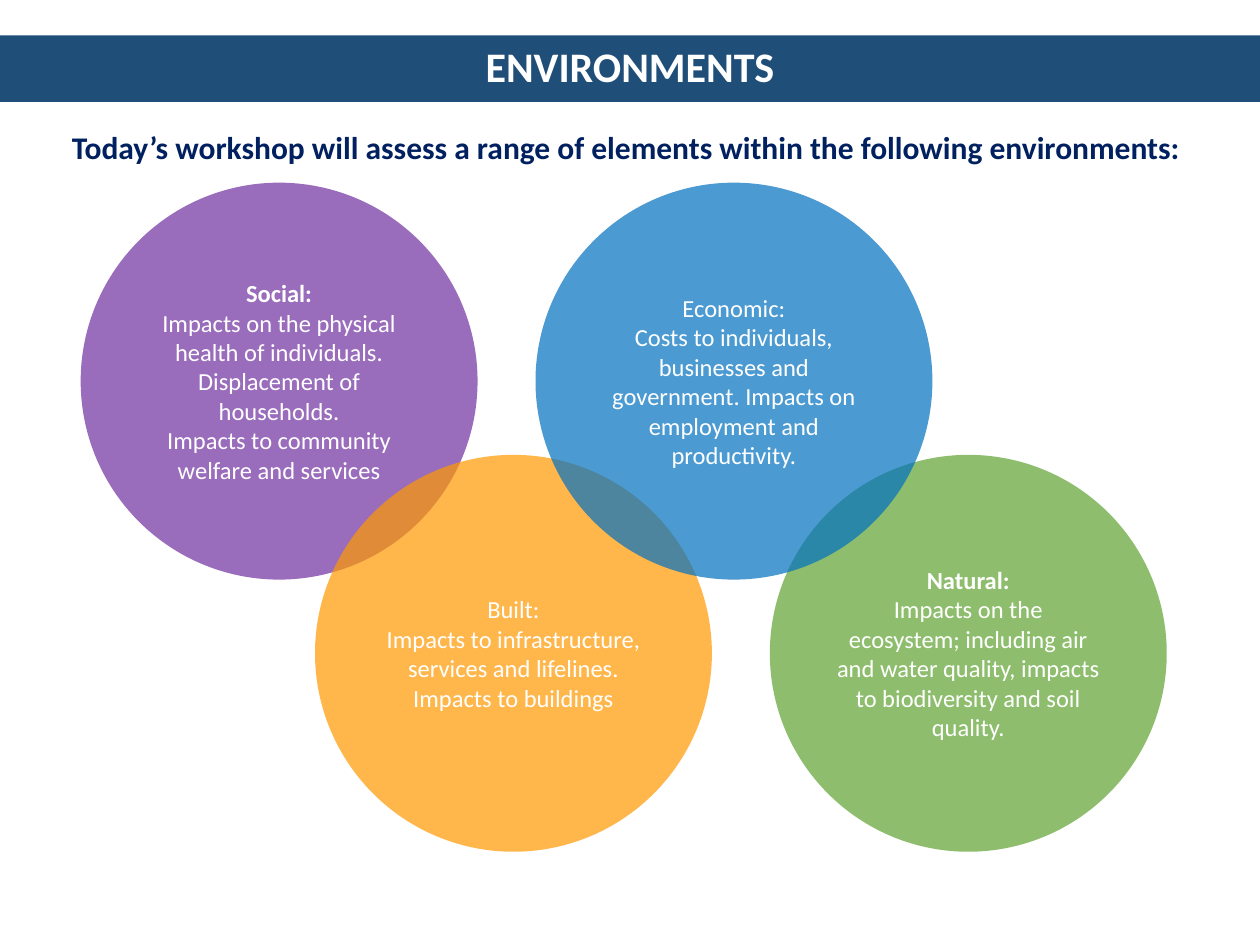
from lxml.etree import SubElement
from pptx import Presentation
from pptx.dml.color import RGBColor
from pptx.enum.shapes import MSO_SHAPE as Shape
from pptx.enum.text import MSO_ANCHOR as Anchor, MSO_AUTO_SIZE as AutoSize, PP_ALIGN as Align
from pptx.oxml.ns import qn
from pptx.util import Inches, Pt

WHITE = RGBColor(0xFF, 0xFF, 0xFF)
NAVY = RGBColor(0x00, 0x20, 0x60)
BAR_BLUE = RGBColor(0x1F, 0x4E, 0x79)
PURPLE = RGBColor(0x70, 0x30, 0xA0)
GREEN = RGBColor(0x70, 0xAD, 0x47)
ORANGE = RGBColor(0xFF, 0x99, 0x00)
BLUE = RGBColor(0x00, 0x70, 0xC0)

DIAMETER = 3.15
UPPER_ROW, LOWER_ROW = 1.45, 3.61

# Left, top, colour, opacity in percent, bold heading, paragraphs
CIRCLES = [
    (0.64, UPPER_ROW, PURPLE, 70, True,
     ["Social:",
      "Impacts on the physical health of individuals. Displacement of households.",
      "Impacts to community welfare and services"]),
    (6.11, LOWER_ROW, GREEN, 79, True,
     ["Natural:",
      "Impacts on the ecosystem; including air and water quality, "
      "impacts to biodiversity and soil quality."]),
    (2.5, LOWER_ROW, ORANGE, 70, False,
     ["Built:",
      "Impacts to infrastructure, services and lifelines.",
      "Impacts to buildings"]),
    (4.25, UPPER_ROW, BLUE, 70, False,
     ["Economic:",
      "Costs to individuals, businesses and government. "
      "Impacts on employment and productivity."]),
]


def set_values(target, values):
    for name, value in values.items():
        setattr(target, name, value)


def place(box, left, top, width, height):
    set_values(box, {"left": Inches(left), "top": Inches(top),
                     "width": Inches(width), "height": Inches(height)})


def write(para, text, size, color, bold, **layout):
    """Fill one paragraph with a single formatted run."""
    set_values(para, layout)
    span = para.add_run()
    span.text = text
    set_values(span.font, {"name": "Calibri", "size": Pt(size), "bold": bold})
    span.font.color.rgb = color


def fill_title(box):
    place(box, 0, 0.28, 10, 0.53)
    box.fill.solid()
    box.fill.fore_color.rgb = BAR_BLUE
    frame = box.text_frame
    set_values(frame, {"auto_size": AutoSize.NONE, "vertical_anchor": Anchor.MIDDLE})
    write(frame.paragraphs[0], "ENVIRONMENTS", 24, WHITE, True,
          alignment=Align.CENTER, line_spacing=0.9)


def fill_body(box):
    place(box, 0.47, 1, 9.05, 5.76)
    box.text_frame.auto_size = AutoSize.NONE
    para = box.text_frame.paragraphs[0]
    write(para, "Today’s workshop will assess a range of elements "
          "within the following environments:", 18, NAVY, True,
          line_spacing=0.9, space_before=Pt(10))
    # Plain paragraph without bullet or indent
    properties = para._p.get_or_add_pPr()
    properties.set("marL", "0")
    properties.set("indent", "0")
    SubElement(properties, qn("a:buNone"))


def add_circle(page, left, top, color, opacity, bold_heading, lines):
    circle = page.shapes.add_shape(Shape.OVAL, Inches(left), Inches(top),
                                   Inches(DIAMETER), Inches(DIAMETER))
    circle.shadow.inherit = False
    circle.line.fill.background()
    circle.fill.solid()
    circle.fill.fore_color.rgb = color
    # Transparency
    color_node = circle._element.spPr.find(qn("a:solidFill"))[0]
    SubElement(color_node, qn("a:alpha"), val=str(opacity * 1000))

    frame = circle.text_frame
    set_values(frame, {"word_wrap": True, "vertical_anchor": Anchor.MIDDLE,
                       "margin_left": Inches(0.06), "margin_right": Inches(0.06),
                       "margin_top": Inches(0.03), "margin_bottom": Inches(0.03)})
    for index, text in enumerate(lines):
        para = frame.add_paragraph() if index else frame.paragraphs[0]
        write(para, text, 14, WHITE, bold_heading and index == 0,
              alignment=Align.CENTER)


def main():
    deck = Presentation()
    set_values(deck, {"slide_width": Inches(10), "slide_height": Inches(7.5)})
    page = deck.slides.add_slide(deck.slide_layouts[1])

    # Title bar and introduction
    fill_title(page.shapes.title)
    fill_body(page.placeholders[1])

    # Overlapping environments, back to front
    for circle in CIRCLES:
        add_circle(page, *circle)

    deck.save("out.pptx")


if __name__ == "__main__":
    main()
